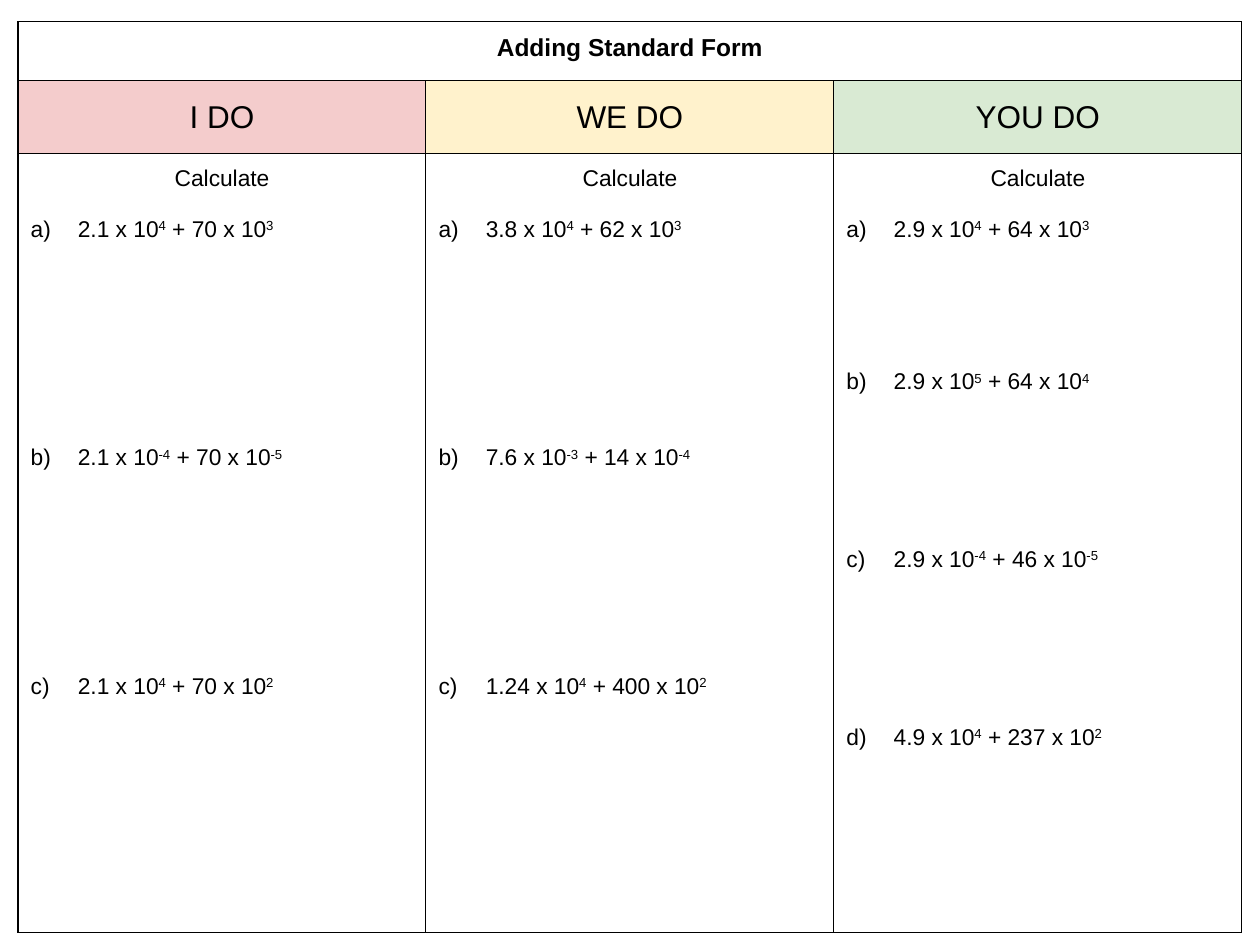
from dataclasses import dataclass
from typing import NamedTuple

from lxml.etree import SubElement
from pptx import Presentation
from pptx.dml.color import RGBColor
from pptx.enum.text import MSO_ANCHOR, PP_ALIGN
from pptx.oxml.ns import qn
from pptx.table import _Cell
from pptx.text.text import _Paragraph
from pptx.util import Pt


@dataclass(frozen=True)
class Theme:
    font: str = "Arial"
    ink: str = "000000"
    rose: str = "F4CCCC"
    cream: str = "FFF2CC"
    mint: str = "D9EAD3"
    title_size: float = 14
    heading_size: float = 18
    body_size: float = 13
    line_pitch: float = 14.5
    border: float = 0.75
    inset: float = 7.2
    hanging: float = 27


class Sum(NamedTuple):
    first: str
    first_power: str
    second: str
    second_power: str
    lines_above: int


class Column(NamedTuple):
    heading: str
    color: str
    sums: list[Sum]


THEME = Theme()
COLUMN_WIDTH = 233.1
ROW_HEIGHTS = (33.8, 41.6, 445)
TABLE_LEFT, TABLE_TOP = 10.3, 12.4

COLUMNS = [
    Column("I DO", THEME.rose, [
        Sum("2.1", "4", "70", "3", 1),
        Sum("2.1", "-4", "70", "-5", 8),
        Sum("2.1", "4", "70", "2", 8),
    ]),
    Column("WE DO", THEME.cream, [
        Sum("3.8", "4", "62", "3", 1),
        Sum("7.6", "-3", "14", "-4", 8),
        Sum("1.24", "4", "400", "2", 8),
    ]),
    Column("YOU DO", THEME.mint, [
        Sum("2.9", "4", "64", "3", 1),
        Sum("2.9", "5", "64", "4", 5),
        Sum("2.9", "-4", "46", "-5", 6),
        Sum("4.9", "4", "237", "2", 6),
    ]),
]


def add_span(para: _Paragraph, text: str, size: float, bold: bool = False, raised: bool = False) -> None:
    span = para.add_run()
    span.text = text
    span.font.name = THEME.font
    span.font.size = Pt(size)
    span.font.bold = bold
    span.font.color.rgb = RGBColor.from_string(THEME.ink)
    if raised:
        span.font._element.set("baseline", "30000")


def add_label(cell: _Cell, text: str, size: float, bold: bool = False) -> None:
    para = cell.text_frame.paragraphs[0]
    para.alignment = PP_ALIGN.CENTER
    add_span(para, text, size, bold)


def add_sum(cell: _Cell, entry: Sum) -> None:
    para = cell.text_frame.add_paragraph()
    para.alignment = PP_ALIGN.LEFT
    para.space_before = Pt(entry.lines_above * THEME.line_pitch)
    properties = para._p.get_or_add_pPr()
    properties.set("marL", str(Pt(THEME.hanging)))
    properties.set("indent", str(-Pt(THEME.hanging)))
    bullet_color = SubElement(properties, qn("a:buClr"))
    SubElement(bullet_color, qn("a:srgbClr"), val=THEME.ink)
    SubElement(properties, qn("a:buFont"), typeface=THEME.font)
    SubElement(properties, qn("a:buAutoNum"), type="alphaLcParenR")
    add_span(para, f"{entry.first} x 10", THEME.body_size)
    add_span(para, entry.first_power, THEME.body_size, raised=True)
    add_span(para, f" + {entry.second} x 10", THEME.body_size)
    add_span(para, entry.second_power, THEME.body_size, raised=True)


def style_cell(cell: _Cell) -> None:
    cell.margin_left = cell.margin_right = Pt(THEME.inset)
    cell.margin_top = cell.margin_bottom = Pt(THEME.inset)
    properties = cell._tc.get_or_add_tcPr()
    for side in ("a:lnL", "a:lnR", "a:lnT", "a:lnB"):
        line = SubElement(properties, qn(side), w=str(Pt(THEME.border)))
        fill = SubElement(line, qn("a:solidFill"))
        SubElement(fill, qn("a:srgbClr"), val=THEME.ink)
    cell.fill.background()


def main() -> None:
    deck = Presentation()
    deck.slide_width, deck.slide_height = Pt(720), Pt(540)
    page = deck.slides.add_slide(deck.slide_layouts[6])
    table = page.shapes.add_table(
        len(ROW_HEIGHTS), len(COLUMNS), Pt(TABLE_LEFT), Pt(TABLE_TOP),
        Pt(COLUMN_WIDTH * len(COLUMNS)), Pt(sum(ROW_HEIGHTS)),
    ).table
    table.first_row = table.horz_banding = False
    for row, height in zip(table.rows, ROW_HEIGHTS):
        row.height = Pt(height)
    for cell in table.iter_cells():
        style_cell(cell)

    title = table.cell(0, 0)
    title.merge(table.cell(0, len(COLUMNS) - 1))
    add_label(title, "Adding Standard Form", THEME.title_size, bold=True)

    for index, column in enumerate(COLUMNS):
        table.columns[index].width = Pt(COLUMN_WIDTH)
        heading, body = table.cell(1, index), table.cell(2, index)
        heading.vertical_anchor = MSO_ANCHOR.MIDDLE
        heading.fill.solid()
        heading.fill.fore_color.rgb = RGBColor.from_string(column.color)
        add_label(heading, column.heading, THEME.heading_size)
        add_label(body, "Calculate", THEME.body_size)
        for entry in column.sums:
            add_sum(body, entry)

    deck.save("out.pptx")


if __name__ == "__main__":
    main()
